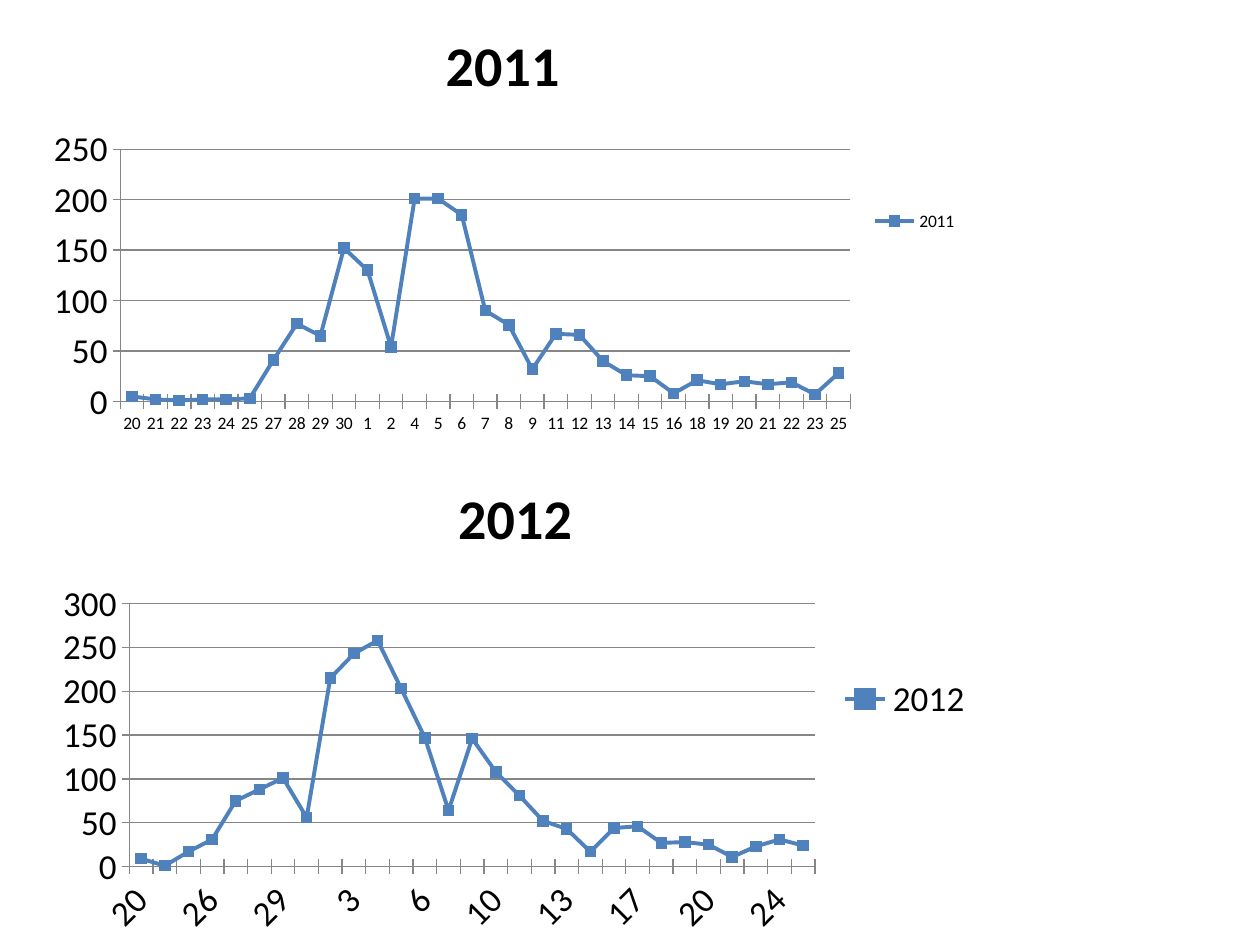
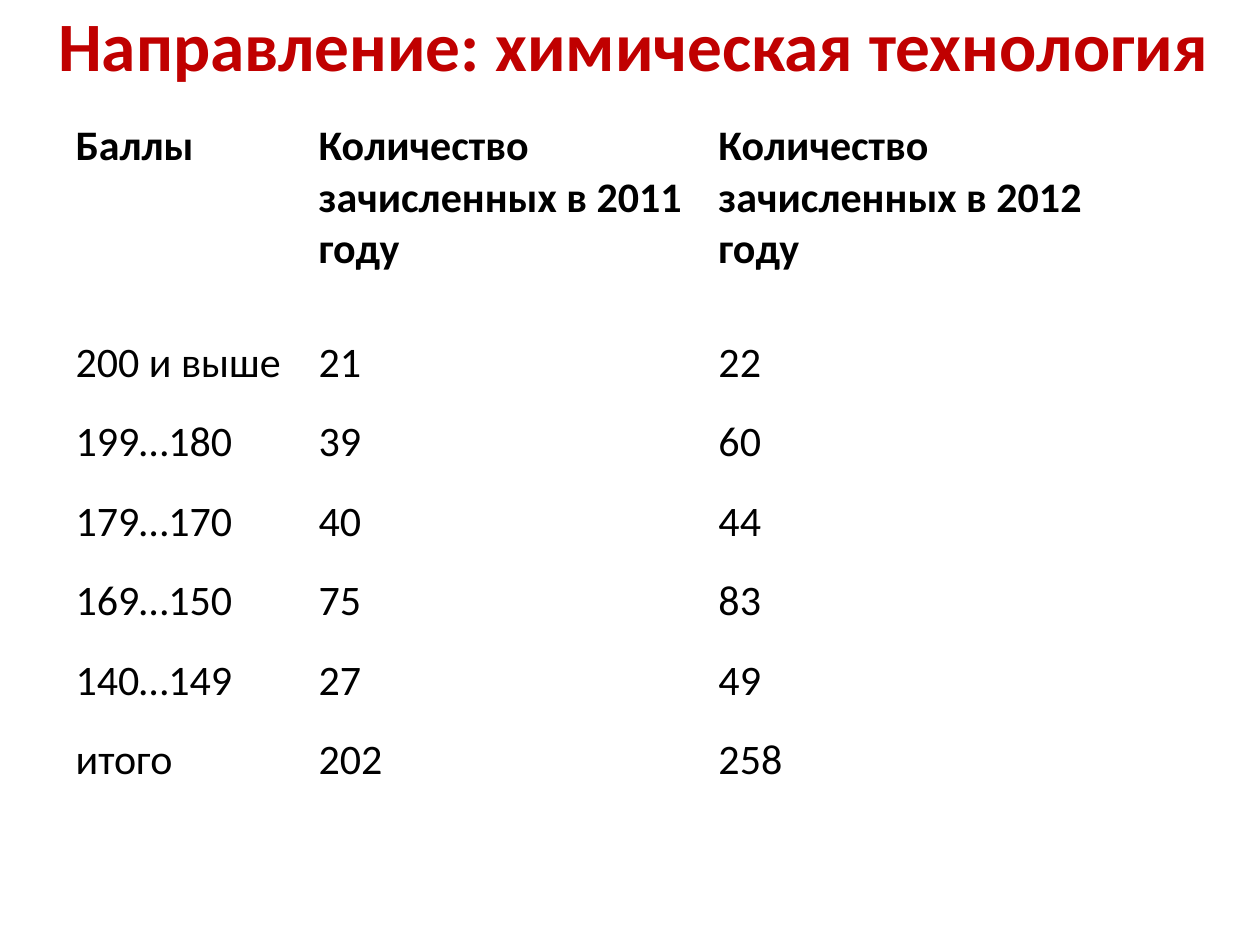
from dataclasses import dataclass

from lxml import etree
from pptx import Presentation
from pptx import util as u
from pptx.chart import data as chart_data
from pptx.dml.color import RGBColor
from pptx.enum import chart as chart_enum
from pptx.enum import text
from pptx.oxml import ns

BLACK = RGBColor(0x00, 0x00, 0x00)
WHITE = RGBColor(0xFF, 0xFF, 0xFF)
RED = RGBColor(0xC0, 0x00, 0x00)
BLUE = RGBColor(0x4F, 0x81, 0xBD)
GREY = RGBColor(0x86, 0x86, 0x86)
FONT = "Calibri"
BLANK_LAYOUT = 6


@dataclass(frozen=True)
class Frame:
    left: float
    top: float
    width: float
    height: float

    def lengths(self) -> tuple:
        return tuple(u.Cm(n) for n in (self.left, self.top, self.width, self.height))


@dataclass(frozen=True)
class YearChart:
    year: str
    frame: Frame
    text_size: int
    maximum: int
    days: tuple
    counts: tuple


YEAR_CHARTS = (
    YearChart(
        "2011", Frame(0.71, 0, 18.85, 8.92), 10, 250,
        (*range(20, 26), *range(27, 31), 1, 2, *range(4, 10),
         *range(11, 17), *range(18, 24), 25),
        (5, 2, 1, 2, 2, 3, 41, 77, 65, 152, 130, 54, 201, 201, 185, 90,
         76, 32, 67, 66, 40, 26, 25, 8, 21, 17, 20, 17, 19, 7, 28),
    ),
    YearChart(
        "2012", Frame(0.89, 9.12, 19, 9.93), 20, 300,
        (20, 22, *range(25, 31), *range(2, 8), *range(9, 15),
         *range(16, 22), *range(23, 26)),
        (9, 1, 17, 31, 75, 88, 101, 56, 215, 243, 258, 203, 147, 64, 146,
         108, 81, 52, 43, 17, 44, 46, 27, 28, 25, 11, 23, 31, 24),
    ),
)

TITLE = "Направление: химическая технология"
TITLE_FRAME = Frame(0.71, 0, 24.13, 1.75)
SCORES = (
    ("Баллы", "Количество зачисленных в 2011 году", "Количество зачисленных в 2012 году"),
    ("200 и выше", "21", "22"),
    ("199…180", "39", "60"),
    ("179…170", "40", "44"),
    ("169…150", "75", "83"),
    ("140…149", "27", "49"),
    ("итого", "202", "258"),
)
COLUMN_WIDTHS = (4.9, 8.06, 8.06)
HEADER_HEIGHT, ROW_HEIGHT = 4.37, 1.6


def style_font(font, size: float, color: RGBColor = BLACK, bold: bool = False) -> None:
    font.name = FONT
    font.size = u.Pt(size)
    font.bold = bold
    font.color.rgb = color


def add_year_chart(page, spec_chart: YearChart) -> None:
    data = chart_data.CategoryChartData()
    data.categories = [str(day) for day in spec_chart.days]
    data.add_series(spec_chart.year, spec_chart.counts)
    chart = page.shapes.add_chart(
        chart_enum.XL_CHART_TYPE.LINE_MARKERS, *spec_chart.frame.lengths(), data
    ).chart
    style_font(chart.font, spec_chart.text_size)

    chart.has_title = True
    heading = chart.chart_title.text_frame
    heading.text = spec_chart.year
    style_font(heading.paragraphs[0].font, 32, bold=True)
    chart.chart_title.include_in_layout = False
    chart.has_legend = True
    chart.legend.position = chart_enum.XL_LEGEND_POSITION.RIGHT
    chart.legend.include_in_layout = False

    for axis in (chart.category_axis, chart.value_axis):
        axis.major_tick_mark = chart_enum.XL_TICK_MARK.CROSS
        axis.format.line.color.rgb = GREY
        axis.format.line.width = u.Pt(0.75)
    values = chart.value_axis
    values.minimum_scale, values.maximum_scale, values.major_unit = 0, spec_chart.maximum, 50
    values.has_major_gridlines = True
    values.major_gridlines.format.line.color.rgb = GREY
    values.major_gridlines.format.line.width = u.Pt(0.75)
    style_font(values.tick_labels.font, 20)

    plot = chart.plots[0]
    plot.vary_by_categories = False
    series = plot.series[0]
    series.smooth = False
    series.format.line.color.rgb = BLUE
    series.format.line.width = u.Pt(2.25)
    series.marker.style = chart_enum.XL_MARKER_STYLE.SQUARE
    series.marker.size = 6
    series.marker.format.fill.solid()
    series.marker.format.fill.fore_color.rgb = BLUE
    series.marker.format.line.color.rgb = BLUE


def add_title(page) -> None:
    box = page.shapes.add_textbox(*TITLE_FRAME.lengths())
    frame = box.text_frame
    frame.word_wrap = True
    frame.vertical_anchor = text.MSO_ANCHOR.MIDDLE
    para = frame.paragraphs[0]
    para.text = TITLE
    para.alignment = text.PP_ALIGN.CENTER
    style_font(para.font, 39.6, RED, True)


def set_borders(cell, bottom: float) -> None:
    properties = cell._tc.get_or_add_tcPr()
    widths = {"lnL": 1, "lnR": 1, "lnT": 1, "lnB": bottom}
    for position, (tag, width) in enumerate(widths.items()):
        line = etree.Element(ns.qn(f"a:{tag}"), w=str(u.Pt(width)))
        fill = etree.SubElement(line, ns.qn("a:solidFill"))
        etree.SubElement(fill, ns.qn("a:srgbClr"), val=str(WHITE))
        properties.insert(position, line)


def add_score_table(page) -> None:
    heights = [HEADER_HEIGHT] + [ROW_HEIGHT] * (len(SCORES) - 1)
    frame = Frame(1.27, 2.31, sum(COLUMN_WIDTHS), sum(heights))
    table = page.shapes.add_table(
        len(SCORES), len(COLUMN_WIDTHS), *frame.lengths()
    ).table
    table.horz_banding = False
    for column, width in zip(table.columns, COLUMN_WIDTHS):
        column.width = u.Cm(width)
    for index, (row, height, labels) in enumerate(zip(table.rows, heights, SCORES)):
        row.height = u.Cm(height)
        is_header = index == 0
        for cell, label in zip(row.cells, labels):
            cell.fill.background()
            set_borders(cell, 3 if is_header else 1)
            para = cell.text_frame.paragraphs[0]
            para.text = label
            style_font(para.font, 24, bold=is_header)


def main() -> None:
    deck = Presentation()
    deck.slide_width, deck.slide_height = u.Cm(25.4), u.Cm(19.05)
    layout = deck.slide_layouts[BLANK_LAYOUT]

    chart_page = deck.slides.add_slide(layout)
    for year_chart in YEAR_CHARTS:
        add_year_chart(chart_page, year_chart)

    table_page = deck.slides.add_slide(layout)
    add_title(table_page)
    add_score_table(table_page)

    deck.save("out.pptx")


if __name__ == "__main__":
    main()
